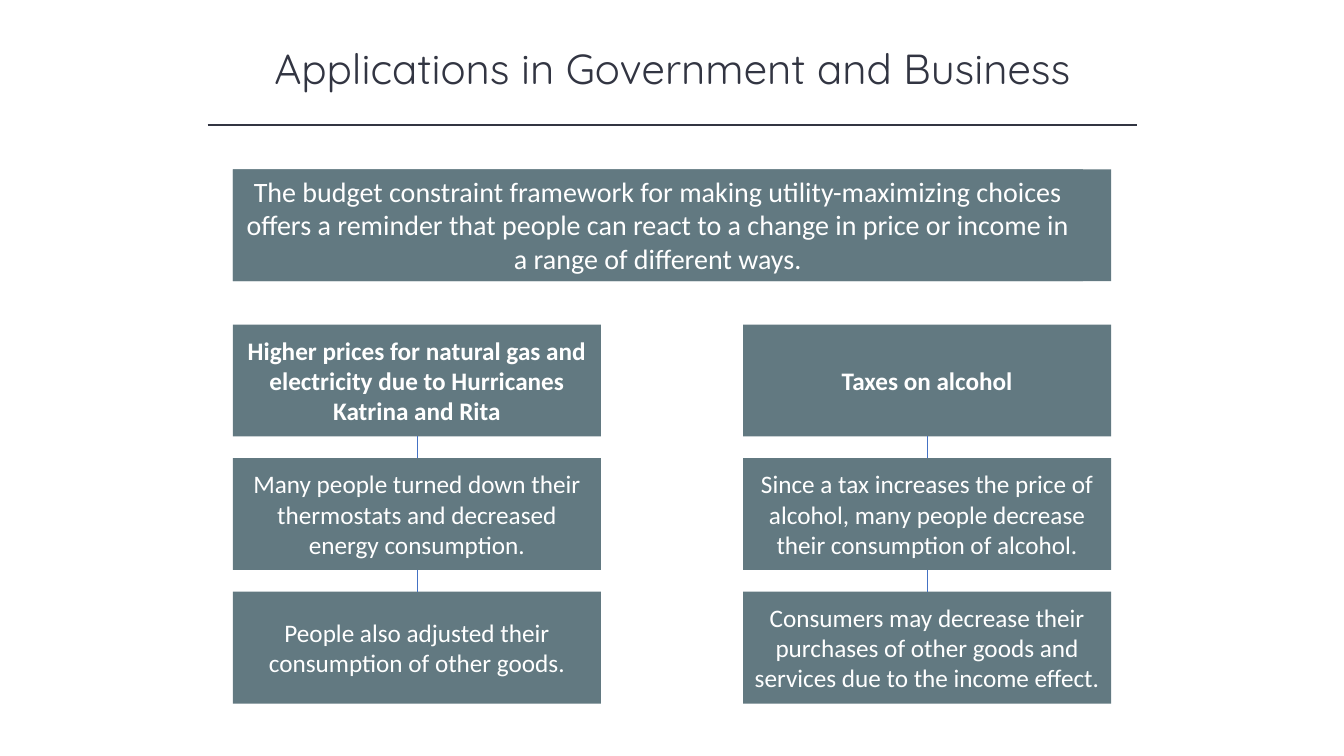
from lxml.etree import SubElement
from pptx import Presentation
from pptx.dml.color import RGBColor
from pptx.enum.shapes import MSO_CONNECTOR, MSO_SHAPE
from pptx.enum.text import MSO_ANCHOR, MSO_AUTO_SIZE, PP_ALIGN
from pptx.oxml.ns import qn
from pptx.util import Inches, Pt

INK, SLATE, BLUE, WHITE = "323542", "627981", "4472C4", "FFFFFF"

# Grid of the two example columns, in inches
LEFT, COLUMN_STEP, BOX_WIDTH = 2.31, 5.06, 3.65
TOP, ROW_STEP, BOX_HEIGHT = 3.22, 1.325, 1.11
GRID_WIDTH = COLUMN_STEP + BOX_WIDTH

BANNER = ("The budget constraint framework for making utility-maximizing choices "
          "offers a reminder that people can react to a change in price or income "
          "in a range of different ways.")
EXAMPLES = [
    ["Higher prices for natural gas and electricity due to Hurricanes Katrina and Rita",
     "Many people turned down their thermostats and decreased energy consumption.",
     "People also adjusted their consumption of other goods."],
    ["Taxes on alcohol",
     "Since a tax increases the price of alcohol, many people decrease their "
     "consumption of alcohol.",
     "Consumers may decrease their purchases of other goods and services due to "
     "the income effect."],
]


def color(value):
    return RGBColor.from_string(value)


class SlideBuilder:
    def __init__(self, presentation):
        self.slide = presentation.slides.add_slide(presentation.slide_layouts[5])

    def set_text(self, shape, text, size, font="Calibri", ink=WHITE, bold=False,
                 anchor=MSO_ANCHOR.MIDDLE):
        frame = shape.text_frame
        frame_format = {"text": text, "word_wrap": True, "vertical_anchor": anchor,
                        "auto_size": MSO_AUTO_SIZE.NONE}
        for name, value in frame_format.items():
            setattr(frame, name, value)
        paragraph = frame.paragraphs[0]
        paragraph.alignment = PP_ALIGN.CENTER
        run_font = paragraph.runs[0].font
        for name, value in {"name": font, "size": Pt(size), "bold": bold}.items():
            setattr(run_font, name, value)
        run_font.color.rgb = color(ink)

    def title(self, text, left, top, width, height):
        title = self.slide.shapes.title
        place = {"left": left, "top": top, "width": width, "height": height}
        for name, value in place.items():
            setattr(title, name, Inches(value))
        self.set_text(title, text, 30, "Quicksand", INK, anchor=MSO_ANCHOR.TOP)

    def box(self, left, top, width, height, shapes=None):
        shapes = shapes or self.slide.shapes
        shape = shapes.add_shape(MSO_SHAPE.RECTANGLE, Inches(left), Inches(top),
                                 Inches(width), Inches(height))
        shape.shadow.inherit = False
        shape.fill.solid()
        shape.fill.fore_color.rgb = color(SLATE)
        shape.line.fill.background()
        return shape

    def banner(self, text, left, top, width, text_width, height):
        group = self.slide.shapes.add_group_shape()
        for box_width in (width, text_width):
            label = self.box(left, top, box_width, height, group.shapes)
        self.set_text(label, text, 20, anchor=MSO_ANCHOR.TOP)

    def cell(self, text, column, row):
        shape = self.box(LEFT + column * COLUMN_STEP, TOP + row * ROW_STEP,
                         BOX_WIDTH, BOX_HEIGHT)
        self.set_text(shape, text, 18, bold=row == 0)
        return shape

    def line(self, ends, ink, weight):
        connector = self.slide.shapes.add_connector(
            MSO_CONNECTOR.STRAIGHT, *(Inches(value) for value in ends))
        connector.line.color.rgb = color(ink)
        connector.line.width = Pt(weight)
        SubElement(connector._element.spPr, qn("a:effectLst"))
        return connector

    def link(self, upper, lower):
        connector = self.line((0, 0, 0, 0), BLUE, 0.5)
        connector.begin_connect(upper, 2)
        connector.end_connect(lower, 0)


def main():
    presentation = Presentation()
    presentation.slide_width = Inches(13.33)
    presentation.slide_height = Inches(7.5)
    builder = SlideBuilder(presentation)

    # Heading and its rule
    builder.title("Applications in Government and Business", 1.67, 0.37, 10, 0.61)
    builder.line((2.06, 1.24, 11.28, 1.24), INK, 1)

    # Main statement
    builder.banner(BANNER, LEFT, 1.68, GRID_WIDTH, 8.43, BOX_HEIGHT)

    # Example columns, each box linked to the next
    for column, texts in enumerate(EXAMPLES):
        cells = [builder.cell(text, column, row) for row, text in enumerate(texts)]
        for upper, lower in zip(cells, cells[1:]):
            builder.link(upper, lower)

    presentation.save("out.pptx")


if __name__ == "__main__":
    main()
